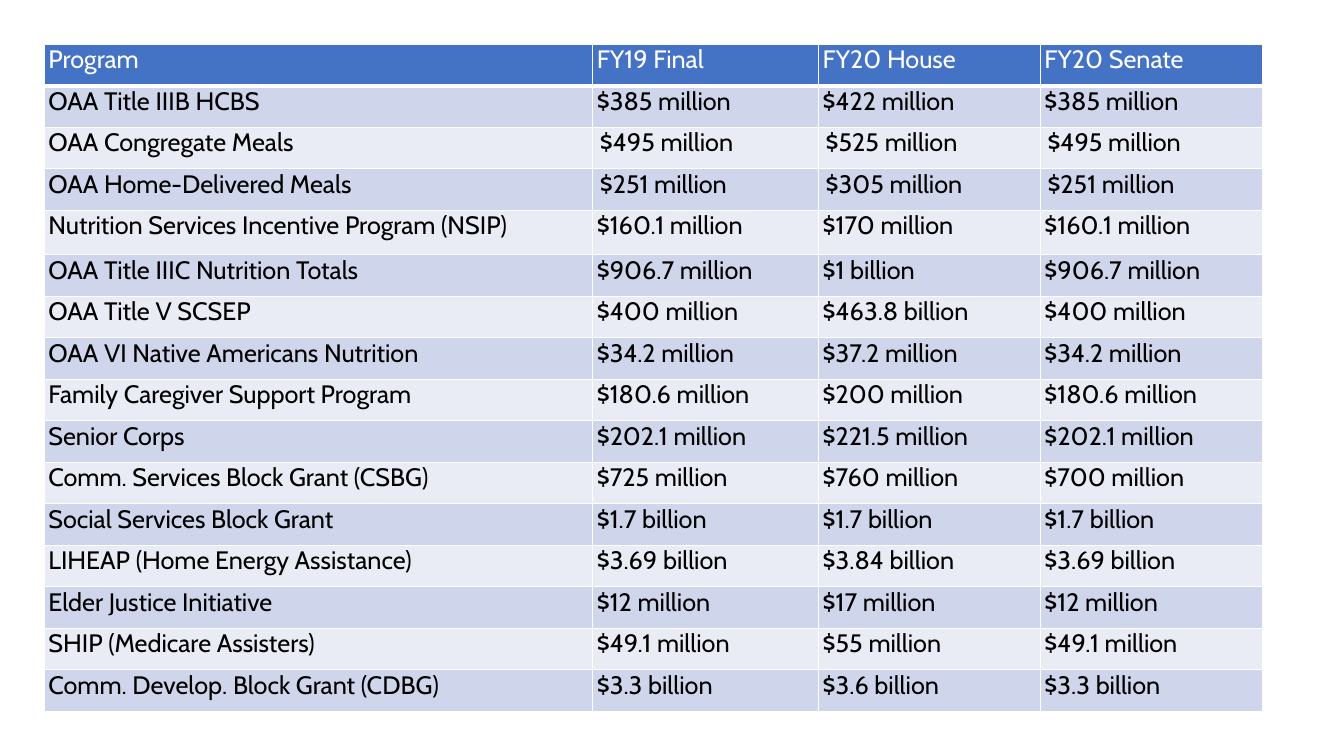
import dataclasses
import lxml.etree
import pptx
import pptx.dml.color
import pptx.oxml.ns
import pptx.util


@dataclasses.dataclass
class Theme:
    font: str = "Cabin"
    text_size: int = 18
    header_fill: str = "4472C4"
    header_text: str = "FFFFFF"
    body_text: str = "000000"
    odd_fill: str = "CFD5EA"
    even_fill: str = "E9EBF5"
    border: str = "FFFFFF"
    thin: int = 1
    thick: int = 3


def add_border(cell, side, width):
    qualified = pptx.oxml.ns.qn
    properties = cell._tc.get_or_add_tcPr()
    line = lxml.etree.SubElement(properties, qualified("a:" + side), w=str(pptx.util.Pt(width)))
    fill = lxml.etree.SubElement(line, qualified("a:solidFill"))
    lxml.etree.SubElement(fill, qualified("a:srgbClr"), val=theme.border)


theme = Theme()
color = pptx.dml.color.RGBColor.from_string
inches = pptx.util.Inches

programs = [
    ("Program", "FY19 Final", "FY20 House", "FY20 Senate"),
    ("OAA Title IIIB HCBS", "$385 million", "$422 million", "$385 million"),
    ("OAA Congregate Meals", "$495 million", "$525 million", "$495 million"),
    ("OAA Home-Delivered Meals", "$251 million", "$305 million", "$251 million"),
    ("Nutrition Services Incentive Program (NSIP)", "$160.1 million", "$170 million", "$160.1 million"),
    ("OAA Title IIIC Nutrition Totals", "$906.7 million", "$1 billion", "$906.7 million"),
    ("OAA Title V SCSEP", "$400 million", "$463.8 billion", "$400 million"),
    ("OAA VI Native Americans Nutrition", "$34.2 million", "$37.2 million", "$34.2 million"),
    ("Family Caregiver Support Program", "$180.6 million", "$200 million", "$180.6 million"),
    ("Senior Corps", "$202.1 million", "$221.5 million", "$202.1 million"),
    ("Comm. Services Block Grant (CSBG)", "$725 million", "$760 million", "$700 million"),
    ("Social Services Block Grant", "$1.7 billion", "$1.7 billion", "$1.7 billion"),
    ("LIHEAP (Home Energy Assistance)", "$3.69 billion", "$3.84 billion", "$3.69 billion"),
    ("Elder Justice Initiative", "$12 million", "$17 million", "$12 million"),
    ("SHIP (Medicare Assisters)", "$49.1 million", "$55 million", "$49.1 million"),
    ("Comm. Develop. Block Grant (CDBG)", "$3.3 billion", "$3.6 billion", "$3.3 billion"),
]
column_widths = [5.44, 2.24, 2.2, 2.2]
margin = 0.44
table_height = 6.62
nsip_row = 4
nsip_height = 0.44
row_height = (table_height - nsip_height) / (len(programs) - 1)
indented_rows = (2, 3)

presentation = pptx.Presentation()
presentation.slide_width = inches(13.33)
presentation.slide_height = inches(7.5)
slide = presentation.slides.add_slide(presentation.slide_layouts[6])

table = slide.shapes.add_table(
    len(programs), len(column_widths),
    inches(margin), inches(margin), inches(sum(column_widths)), inches(table_height),
).table
for column, width in zip(table.columns, column_widths):
    column.width = inches(width)

for row_index, values in enumerate(programs):
    is_header = row_index == 0
    table.rows[row_index].height = inches(nsip_height if row_index == nsip_row else row_height)
    band_fill = theme.odd_fill if row_index % 2 else theme.even_fill
    for column_index, value in enumerate(values):
        cell = table.cell(row_index, column_index)
        is_indented = row_index in indented_rows and column_index > 0
        cell.margin_left = cell.margin_right = inches(0.07 if is_indented else 0.04)
        cell.margin_top = cell.margin_bottom = 0
        for side in ("lnL", "lnR", "lnT", "lnB"):
            add_border(cell, side, theme.thick if is_header and side == "lnB" else theme.thin)
        cell.fill.solid()
        cell.fill.fore_color.rgb = color(theme.header_fill if is_header else band_fill)
        run = cell.text_frame.paragraphs[0].add_run()
        run.text = value
        run.font.name = theme.font
        run.font.size = pptx.util.Pt(theme.text_size)
        run.font.bold = False
        run.font.color.rgb = color(theme.header_text if is_header else theme.body_text)

presentation.save("out.pptx")
